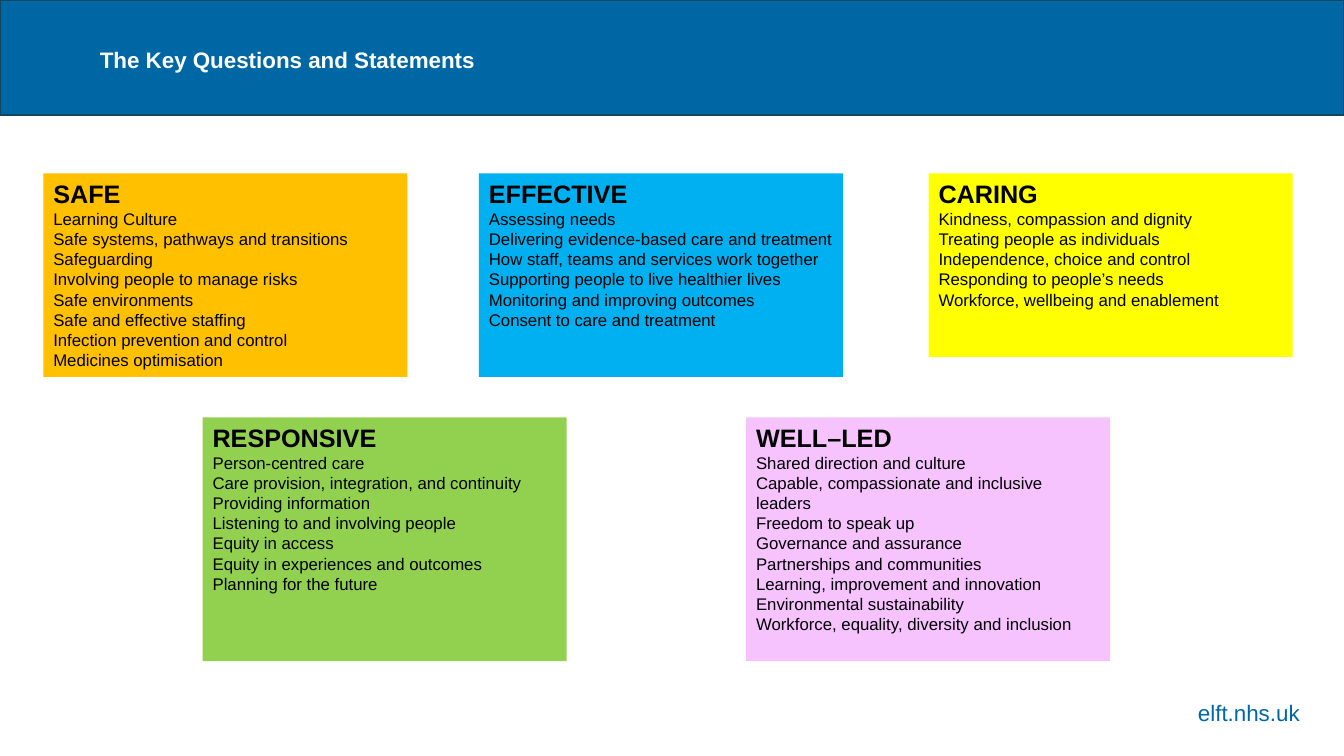
from pptx import Presentation
from pptx.dml.color import RGBColor
from pptx.enum.shapes import MSO_SHAPE
from pptx.enum.text import MSO_ANCHOR, MSO_AUTO_SIZE, PP_ALIGN
from pptx.util import Inches, Pt

RECT = MSO_SHAPE.RECTANGLE
TOP = MSO_ANCHOR.TOP
FIXED = MSO_AUTO_SIZE.NONE
LEFT, RIGHT = PP_ALIGN.LEFT, PP_ALIGN.RIGHT

BLUE, EDGE, WHITE, BLACK = "0067A5", "104760", "FFFFFF", "000000"
WIDE, HIGH = 13.33, 7.5
CARD = 3.61
UPPER, LOWER = 1.72, 4.14

CARDS = [
    (0.43, UPPER, 2.02, "FFC000", "SAFE", [
        "Learning Culture",
        "Safe systems, pathways and transitions",
        "Safeguarding",
        "Involving people to manage risks",
        "Safe environments",
        "Safe and effective staffing",
        "Infection prevention and control",
        "Medicines optimisation"]),
    (4.75, UPPER, 2.02, "00B0F0", "EFFECTIVE", [
        "Assessing needs",
        "Delivering evidence-based care and treatment",
        "How staff, teams and services work together",
        "Supporting people to live healthier lives",
        "Monitoring and improving outcomes",
        "Consent to care and treatment"]),
    (9.21, UPPER, 1.82, "FFFF00", "CARING", [
        "Kindness, compassion and dignity",
        "Treating people as individuals",
        "Independence, choice and control",
        "Responding to people’s needs",
        "Workforce, wellbeing and enablement"]),
    (7.4, LOWER, 2.42, "F6C3FF", "WELL–LED", [
        "Shared direction and culture",
        "Capable, compassionate and inclusive leaders",
        "Freedom to speak up",
        "Governance and assurance",
        "Partnerships and communities",
        "Learning, improvement and innovation",
        "Environmental sustainability",
        "Workforce, equality, diversity and inclusion"]),
    (2.01, LOWER, 2.42, "92D050", "RESPONSIVE", [
        "Person-centred care",
        "Care provision, integration, and continuity",
        "Providing information",
        "Listening to and involving people",
        "Equity in access",
        "Equity in experiences and outcomes",
        "Planning for the future"]),
]


def paint(part, color):
    """Give a fill a solid colour from a hex string."""
    part.solid()
    part.fore_color.rgb = RGBColor.from_string(color)


class Board:
    """Hold the style and the current slide."""

    def __init__(self, slide, face="Arial"):
        """Keep the slide's shapes and the font name."""
        self.shapes = slide.shapes
        self.face = face

    def style(self, para, text, size, color, bold=False, align=LEFT):
        """Put styled text in a paragraph."""
        para.text = text
        para.alignment = align
        font = para.font
        font.name, font.size, font.bold = self.face, Pt(size), bold
        paint(font.fill, color)

    def frame(self, shape):
        """Set wrapping and a top anchor on a text frame."""
        frame = shape.text_frame
        frame.word_wrap = True
        frame.auto_size = FIXED
        frame.vertical_anchor = TOP
        return frame

    def box(self, x, y, w, h):
        """Add a text box and return it with its frame."""
        box = self.shapes.add_textbox(Inches(x), Inches(y), Inches(w), Inches(h))
        return box, self.frame(box)

    def band(self, height):
        """Draw the header band across the slide."""
        band = self.shapes.add_shape(RECT, 0, 0, Inches(WIDE), Inches(height))
        band.shadow.inherit = False
        paint(band.fill, BLUE)
        paint(band.line.fill, EDGE)
        band.line.width = Pt(1.5)

    def title(self, text, x, y, w, h):
        """Place the title placeholder in front of the band."""
        title = self.shapes.title
        title.left, title.top = Inches(x), Inches(y)
        title.width, title.height = Inches(w), Inches(h)
        self.style(self.frame(title).paragraphs[0], text, 16, WHITE, True)
        self.shapes._spTree.append(title._element)

    def card(self, x, y, h, color, head, lines):
        """Draw a filled card with a heading and its statements."""
        box, frame = self.box(x, y, CARD, h)
        paint(box.fill, color)
        self.style(frame.paragraphs[0], head, 18, BLACK, True)
        for line in lines:
            self.style(frame.add_paragraph(), line, 12, BLACK)

    def label(self, text, x, y, w, h):
        """Add a right-aligned label."""
        frame = self.box(x, y, w, h)[1]
        self.style(frame.paragraphs[0], text, 16, BLUE, align=RIGHT)


def main():
    """Build and save the slide."""
    deck = Presentation()
    deck.slide_width, deck.slide_height = Inches(WIDE), Inches(HIGH)
    board = Board(deck.slides.add_slide(deck.slide_layouts[5]))
    board.label("elft.nhs.uk", 11.17, 6.89, 1.82, 0.37)
    board.band(1.14)
    board.title("The Key Questions and Statements", 0.89, 0.41, 5.32, 0.7)
    for card in CARDS:
        board.card(*card)
    deck.save("out.pptx")


if __name__ == "__main__":
    main()
